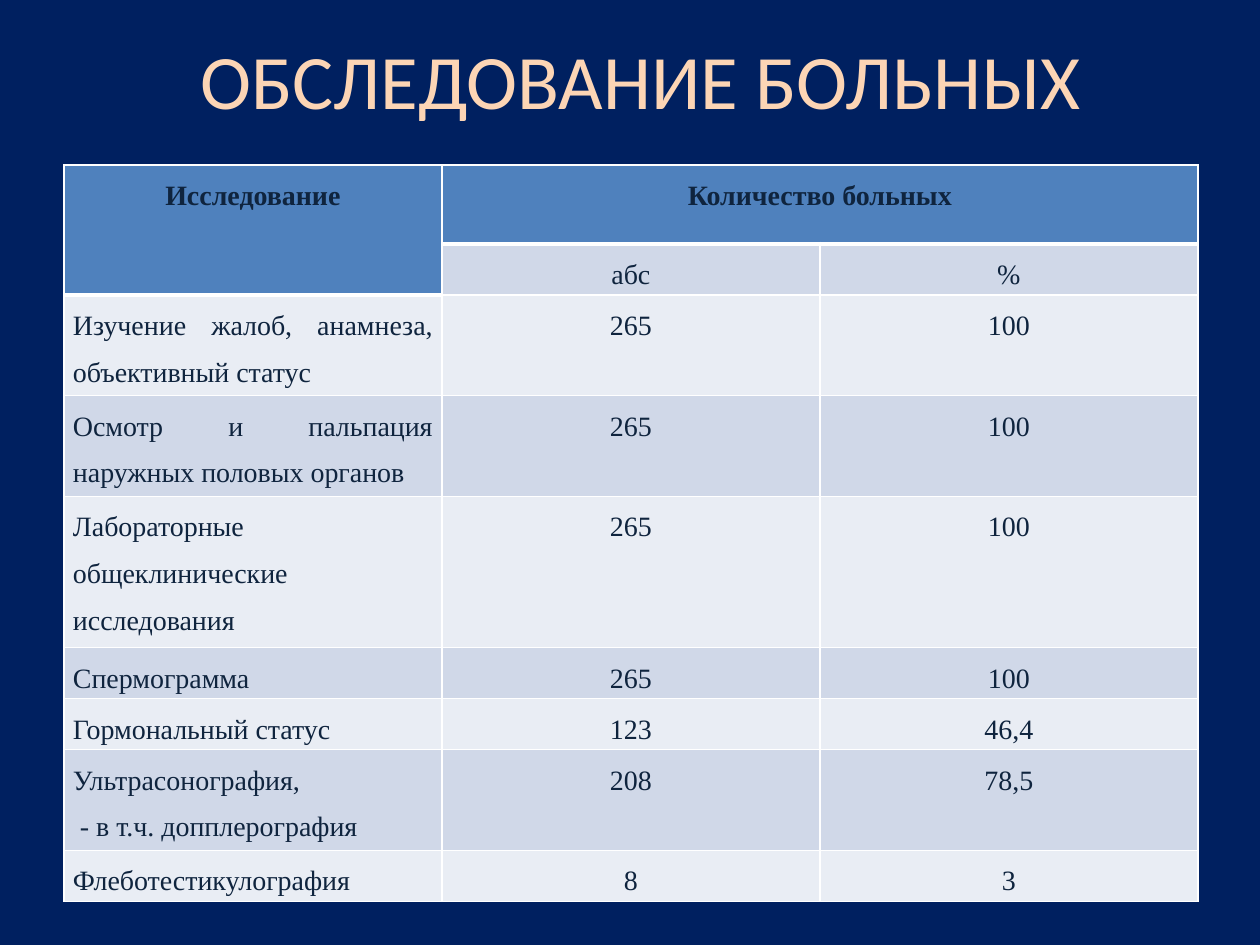
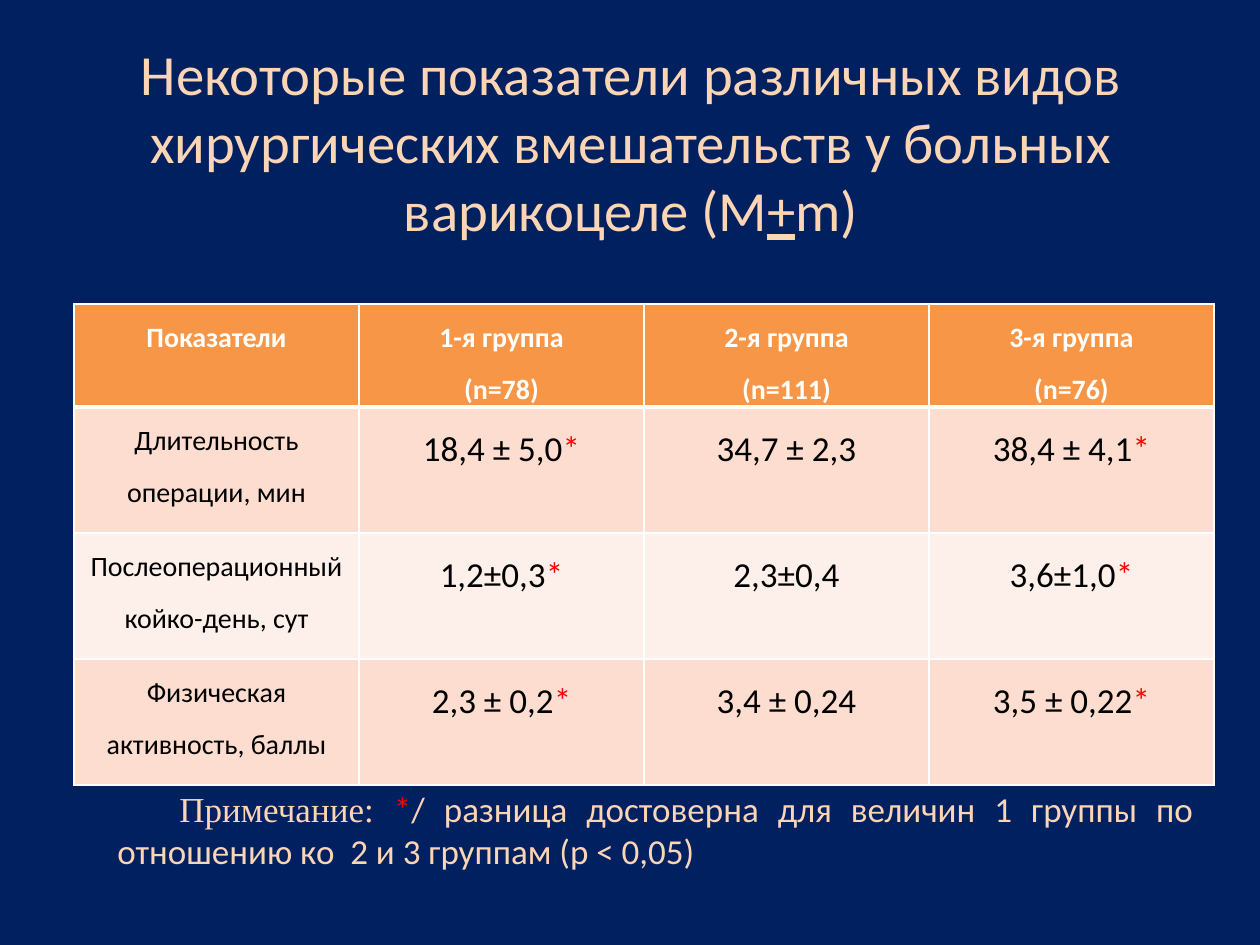
from lxml import etree
from pptx import Presentation
from pptx.dml.color import RGBColor as RGB
from pptx.enum.text import MSO_ANCHOR as ANCHOR, PP_ALIGN as ALIGN
from pptx.oxml.ns import qn
from pptx.util import Pt

PX = 914400 // 126  # EMU in one px
NAVY, PEACH, WHITE = RGB(0, 0x20, 0x60), RGB(0xFC, 0xD5, 0xB5), RGB(255, 255, 255)
BLACK, RED, INK = RGB(0, 0, 0), RGB(255, 0, 0), RGB(0x0F, 0x24, 0x3E)
BLUE, ORANGE = RGB(0x4F, 0x81, 0xBD), RGB(0xF7, 0x96, 0x46)
BLUE_BANDS = RGB(0xD0, 0xD8, 0xE8), RGB(0xE9, 0xED, 0xF4)
ORANGE_BANDS = RGB(0xFC, 0xDD, 0xCF), RGB(0xFD, 0xEF, 0xE9)
SERIF, SANS = "Times New Roman", "Calibri"


def add_run(p, text, color, **fmt):
    r = p.add_run()
    r.text = text
    r.font.color.rgb = color
    for name, value in fmt.items():
        setattr(r.font, name, value)


def style_cell(cell, fill, top, bottom):
    """Draw white borders (widths in points), then fill the cell and set its margins."""
    tcPr = cell._tc.get_or_add_tcPr()
    for side, width in zip("LRTB", (1, 1, top, bottom)):
        ln = etree.SubElement(tcPr, qn(f"a:ln{side}"), w=str(Pt(width)))
        solid = etree.SubElement(ln, qn("a:solidFill"))
        etree.SubElement(solid, qn("a:srgbClr"), val=str(WHITE))
    cell.fill.solid()
    cell.fill.fore_color.rgb = fill
    cell.margin_left = cell.margin_right = 9 * PX
    cell.margin_top = cell.margin_bottom = 0


prs = Presentation()
prs.slide_width, prs.slide_height = 1260 * PX, 945 * PX

exams = [
    ["Исследование", "Количество больных", ""],
    ["", "абс", "%"],
    ["Изучение жалоб, анамнеза, объективный статус", "265", "100"],
    ["Осмотр и пальпация наружных половых органов", "265", "100"],
    ["Лабораторные общеклинические исследования", "265", "100"],
    ["Спермограмма", "265", "100"],
    ["Гормональный статус", "123", "46,4"],
    ["Ультрасонография,\n - в т.ч. допплерография", "208", "78,5"],
    ["Флеботестикулография", "8", "3"],
]
outcomes = [
    ["Показатели", "1-я группа\n(n=78)", "2-я группа\n(n=111)", "3-я группа\n(n=76)"],
    ["Длительность операции, мин", "18,4 ± 5,0*", "34,7 ± 2,3", "38,4 ± 4,1*"],
    ["Послеоперационный койко-день, сут", "1,2±0,3*", "2,3±0,4", "3,6±1,0*"],
    ["Физическая активность, баллы", "2,3 ± 0,2*", "3,4 ± 0,24", "3,5 ± 0,22*"],
]
pages = [
    dict(title=["ОБСЛЕДОВАНИЕ БОЛЬНЫХ"], title_at=(74, 0), title_size=44, title_bottom=6,
         rows=exams, at=(64, 165), col_width=378,
         heights=[79, 51, 93, 93, 140, 51, 51, 93, 51],
         head={(0, 0), (0, 1), (0, 2), (1, 0)}, merges=[(0, 0, 1, 0), (0, 1, 0, 2)],
         head_fill=BLUE, head_ink=INK, ink=INK, bands=BLUE_BANDS,
         font=SERIF, value_size=16, label_align=ALIGN.JUSTIFY),
    dict(title=["Некоторые показатели различных видов хирургических вмешательств "
                "у больных варикоцеле (M", "+", "m)"],
         title_at=(64, 96), title_size=32.4, title_bottom=75,
         rows=outcomes, at=(74, 304), col_width=285, heights=[103, 126, 126, 126],
         head={(0, c) for c in range(4)}, merges=[],
         head_fill=ORANGE, head_ink=WHITE, ink=BLACK, bands=ORANGE_BANDS,
         font=SANS, value_size=20, label_align=ALIGN.CENTER),
]

for page in pages:
    s = prs.slides.add_slide(prs.slide_layouts[6])
    s.background.fill.solid()
    s.background.fill.fore_color.rgb = NAVY

    x, y = page["title_at"]
    tf = s.shapes.add_textbox(x * PX, y * PX, 1134 * PX, 158 * PX).text_frame
    tf.word_wrap, tf.vertical_anchor = True, ANCHOR.MIDDLE
    tf.margin_bottom = page["title_bottom"] * PX
    p = tf.paragraphs[0]
    p.alignment = ALIGN.CENTER
    for text in page["title"]:
        add_run(p, text, PEACH, size=Pt(page["title_size"]), name=SANS, underline=text == "+")

    rows, heights, head = page["rows"], page["heights"], page["head"]
    x, y = page["at"]
    n_cols = len(rows[0])
    table = s.shapes.add_table(len(rows), n_cols, x * PX, y * PX,
                               n_cols * page["col_width"] * PX, sum(heights) * PX).table
    table.first_row = table.horz_banding = False
    for col in table.columns:
        col.width = page["col_width"] * PX
    for row, height in zip(table.rows, heights):
        row.height = height * PX
    for r1, c1, r2, c2 in page["merges"]:
        table.cell(r1, c1).merge(table.cell(r2, c2))

    for r, texts in enumerate(rows):
        for c, text in enumerate(texts):
            cell = table.cell(r, c)
            is_head = (r, c) in head
            under_head = not is_head and (r - 1, c) in head
            style_cell(cell, page["head_fill"] if is_head else page["bands"][(r - 1) % 2],
                       top=3 if under_head else 1, bottom=3 if is_head else 1)
            if not text:
                continue
            is_label = c == 0 and not is_head
            fmt = dict(size=Pt(16 if is_label or is_head else page["value_size"]),
                       name=page["font"], bold=is_head)
            for i, line in enumerate(text.split("\n")):
                p = cell.text_frame.add_paragraph() if i else cell.text_frame.paragraphs[0]
                p.alignment = page["label_align"] if is_label else ALIGN.CENTER
                p.line_spacing = 1.5
                add_run(p, line.rstrip("*"), page["head_ink" if is_head else "ink"], **fmt)
                if line.endswith("*"):
                    add_run(p, "*", RED, **fmt)

# Significance note under the outcomes table
tf = s.shapes.add_textbox(105 * PX, 738 * PX, 1101 * PX, 183 * PX).text_frame
tf.word_wrap, tf.vertical_anchor = True, ANCHOR.MIDDLE
p = tf.paragraphs[0]
p.alignment = ALIGN.JUSTIFY
p._p.get_or_add_pPr().set("indent", str(62 * PX))
for text, color, font in [
    ("Примечание: ", PEACH, SERIF),
    ("*", RED, SANS),
    ("/ разница достоверна для величин 1 группы по отношению ко  2 и 3 группам (p < 0,05)",
     PEACH, SANS),
]:
    add_run(p, text, color, size=Pt(20), name=font)

prs.save("out.pptx")
